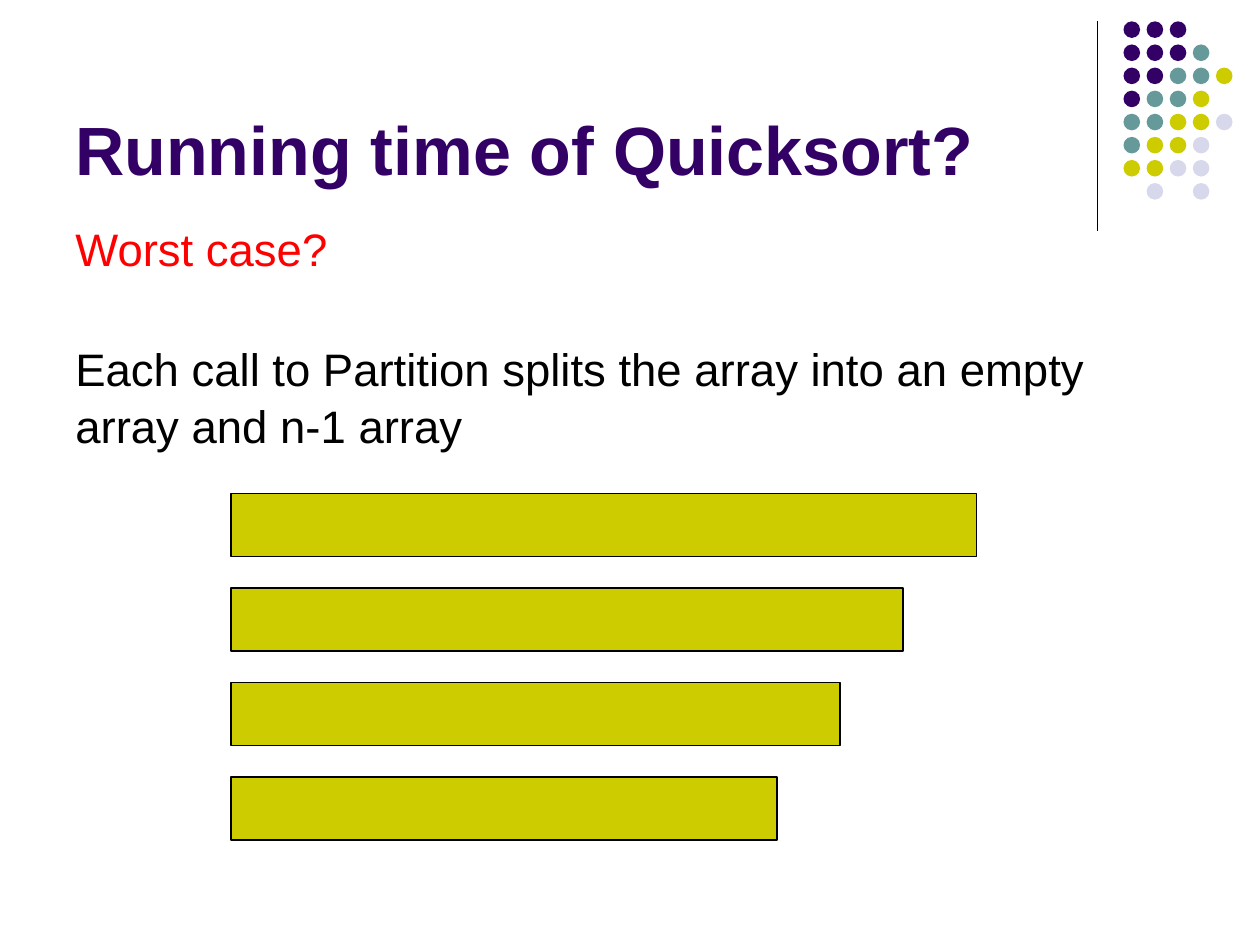
"""Build the slide on the worst case running time of Quicksort."""
from lxml.etree import SubElement
from pptx import Presentation
from pptx.dml.color import RGBColor
from pptx.enum.shapes import MSO_CONNECTOR, MSO_SHAPE
from pptx.enum.text import MSO_ANCHOR
from pptx.oxml.ns import qn
from pptx.util import Pt

TITLE = "Running time of Quicksort?"
BODY = [
    ("Worst case?", "FF0000", 0),
    ("Each call to Partition splits the array into an empty array and n-1 array", "000000", 36),
]
BAR_WIDTHS = [426, 384, 348, 312]
BAR_LEFT, BAR_TOP, BAR_HEIGHT, BAR_PITCH = 132, 282, 36, 54
DOT_COLORS = {"P": "330066", "T": "669999", "Y": "CCCC00", "L": "D8D8EC"}
DOT_ROWS = ["PPP", "PPPT", "PPTTY", "PTTY", "TTYYL", "TYYL", "YYLL", " L L"]
DOT_LEFT, DOT_TOP, DOT_SIZE, DOT_PITCH = 642, 12.2, 9.5, 13.2


def color(value):
    return RGBColor.from_string(value)


def add_filled(slide, kind, left, top, width, height, fill, outline=None):
    shape = slide.shapes.add_shape(kind, Pt(left), Pt(top), Pt(width), Pt(height))
    shape.shadow.inherit = False
    shape.fill.solid()
    shape.fill.fore_color.rgb = color(fill)
    if outline:
        shape.line.color.rgb = color(outline)
        shape.line.width = Pt(0.75)
    else:
        shape.line.fill.background()


def add_text(slide, left, top, width, height, paragraphs, size, bold, anchor, spacing):
    box = slide.shapes.add_textbox(Pt(left), Pt(top), Pt(width), Pt(height))
    frame = box.text_frame
    frame.word_wrap = True
    frame.vertical_anchor = anchor
    frame.text = "\n".join(text for text, _, _ in paragraphs)
    for para, (_, text_color, gap) in zip(frame.paragraphs, paragraphs):
        para.space_before = Pt(gap)
        para.line_spacing = spacing
        font = para.runs[0].font
        font.name = "Arial"
        font.size = Pt(size)
        font.bold = bold
        font.color.rgb = color(text_color)


def main():
    deck = Presentation()
    deck.slide_width, deck.slide_height = Pt(720), Pt(540)
    slide = deck.slides.add_slide(deck.slide_layouts[6])

    divider = slide.shapes.add_connector(
        MSO_CONNECTOR.STRAIGHT, Pt(627), Pt(12), Pt(627), Pt(132))
    divider.line.color.rgb = color("000000")
    divider.line.width = Pt(0.75)
    SubElement(divider.element.spPr, qn("a:effectLst"))

    for row, codes in enumerate(DOT_ROWS):
        for column, code in enumerate(codes):
            if code in DOT_COLORS:
                add_filled(slide, MSO_SHAPE.OVAL, DOT_LEFT + column * DOT_PITCH,
                           DOT_TOP + row * DOT_PITCH, DOT_SIZE, DOT_SIZE, DOT_COLORS[code])

    add_text(slide, 36, 9.5, 594, 102, [(TITLE, "330066", 0)], 39, True,
             MSO_ANCHOR.BOTTOM, 1)
    add_text(slide, 36, 121, 648, 111, BODY, 26, False, MSO_ANCHOR.TOP, 1.05)

    for index, width in enumerate(BAR_WIDTHS):
        add_filled(slide, MSO_SHAPE.RECTANGLE, BAR_LEFT, BAR_TOP + index * BAR_PITCH,
                   width, BAR_HEIGHT, "CCCC00", "000000")

    deck.save("out.pptx")


if __name__ == "__main__":
    main()
